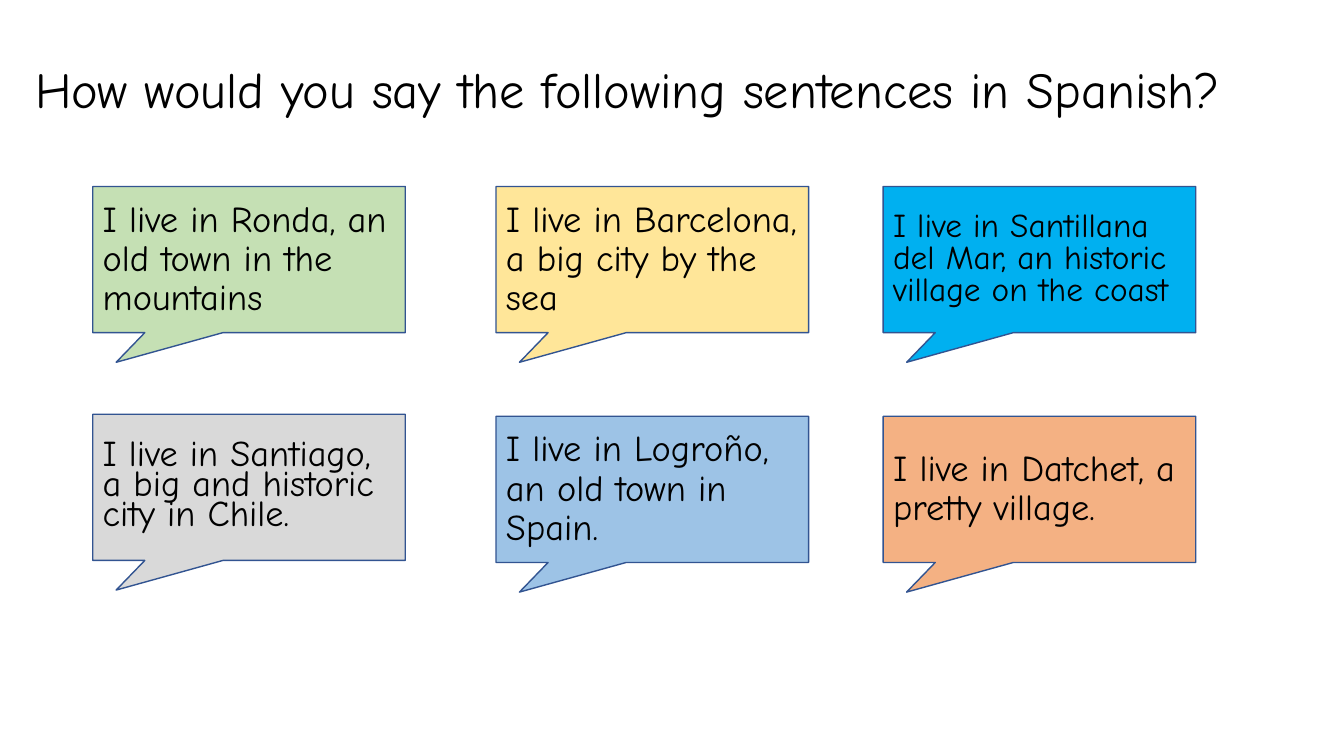
from pptx import Presentation
from pptx.dml.color import RGBColor
from pptx.enum.shapes import MSO_SHAPE
from pptx.enum.text import MSO_ANCHOR, MSO_AUTO_SIZE, PP_ALIGN
from pptx.util import Inches, Pt

BLACK = RGBColor(0x00, 0x00, 0x00)
OUTLINE = RGBColor(0x32, 0x54, 0x91)
GREEN = RGBColor(0xC5, 0xE0, 0xB4)
YELLOW = RGBColor(0xFF, 0xE6, 0x99)
BRIGHT_BLUE = RGBColor(0x00, 0xB0, 0xF0)
GREY = RGBColor(0xD9, 0xD9, 0xD9)
SOFT_BLUE = RGBColor(0x9D, 0xC3, 0xE6)
ORANGE = RGBColor(0xF4, 0xB1, 0x83)

COLUMNS = (0.92, 4.92, 8.76)
ROWS = (1.85, 4.13)

# Sentence, fill, and any departure from the standard callout
SENTENCES = (
    ("I live in Ronda, an old town in the mountains", GREEN, {}),
    ("I live in Barcelona, a big city by the sea", YELLOW, {}),
    ("I live in Santillana del Mar, an historic village on the coast",
     BRIGHT_BLUE, {"size": 23.8, "line_spacing": 0.8}),
    ("I live in Santiago, a big and historic city in Chile.",
     GREY, {"size": 25.9, "line_spacing": 0.7, "shift": -0.02}),
    ("I live in Logroño, an old town in Spain.", SOFT_BLUE, {}),
    ("I live in Datchet, a pretty village.", ORANGE, {}),
)


def write_text(shape, text, *, font="Comic Neue", size=26, color=BLACK, line_spacing=0.9):
    frame = shape.text_frame
    frame.word_wrap = True
    frame.auto_size = MSO_AUTO_SIZE.NONE
    frame.vertical_anchor = MSO_ANCHOR.MIDDLE
    paragraph = frame.paragraphs[0]
    paragraph.alignment = PP_ALIGN.LEFT
    paragraph.line_spacing = line_spacing
    run = paragraph.add_run()
    run.text = text
    run.font.name = font
    run.font.size = Pt(size)
    run.font.color.rgb = color


class SentenceSlide:
    """Holds the slide and the shared look of its speech bubbles."""

    font = "Comic Neue"
    bubble_width, bubble_height = 3.1, 1.45
    tail = (-0.425, 0.703)

    def __init__(self, presentation):
        self.slide = presentation.slides.add_slide(presentation.slide_layouts[5])

    def title(self, text):
        shape = self.slide.shapes.title
        shape.left, shape.top = Inches(0.25), Inches(0.19)
        shape.width, shape.height = Inches(12.95), Inches(1.45)
        write_text(shape, text, font=self.font, size=36)

    def bubble(self, text, left, top, fill, **text_format):
        shape = self.slide.shapes.add_shape(
            MSO_SHAPE.RECTANGULAR_CALLOUT, Inches(left), Inches(top),
            Inches(self.bubble_width), Inches(self.bubble_height))
        shape.adjustments[0], shape.adjustments[1] = self.tail
        shape.shadow.inherit = False
        shape.fill.solid()
        shape.fill.fore_color.rgb = fill
        shape.line.color.rgb = OUTLINE
        shape.line.width = Pt(1)
        write_text(shape, text, font=self.font, **text_format)


def main():
    presentation = Presentation()
    presentation.slide_width = Inches(13.33)
    presentation.slide_height = Inches(7.5)

    slide = SentenceSlide(presentation)
    slide.title("How would you say the following sentences in Spanish?")
    for index, (text, fill, changes) in enumerate(SENTENCES):
        row, column = divmod(index, len(COLUMNS))
        text_format = dict(changes)
        top = ROWS[row] + text_format.pop("shift", 0)
        slide.bubble(text, COLUMNS[column], top, fill, **text_format)

    presentation.save("out.pptx")


if __name__ == "__main__":
    main()
